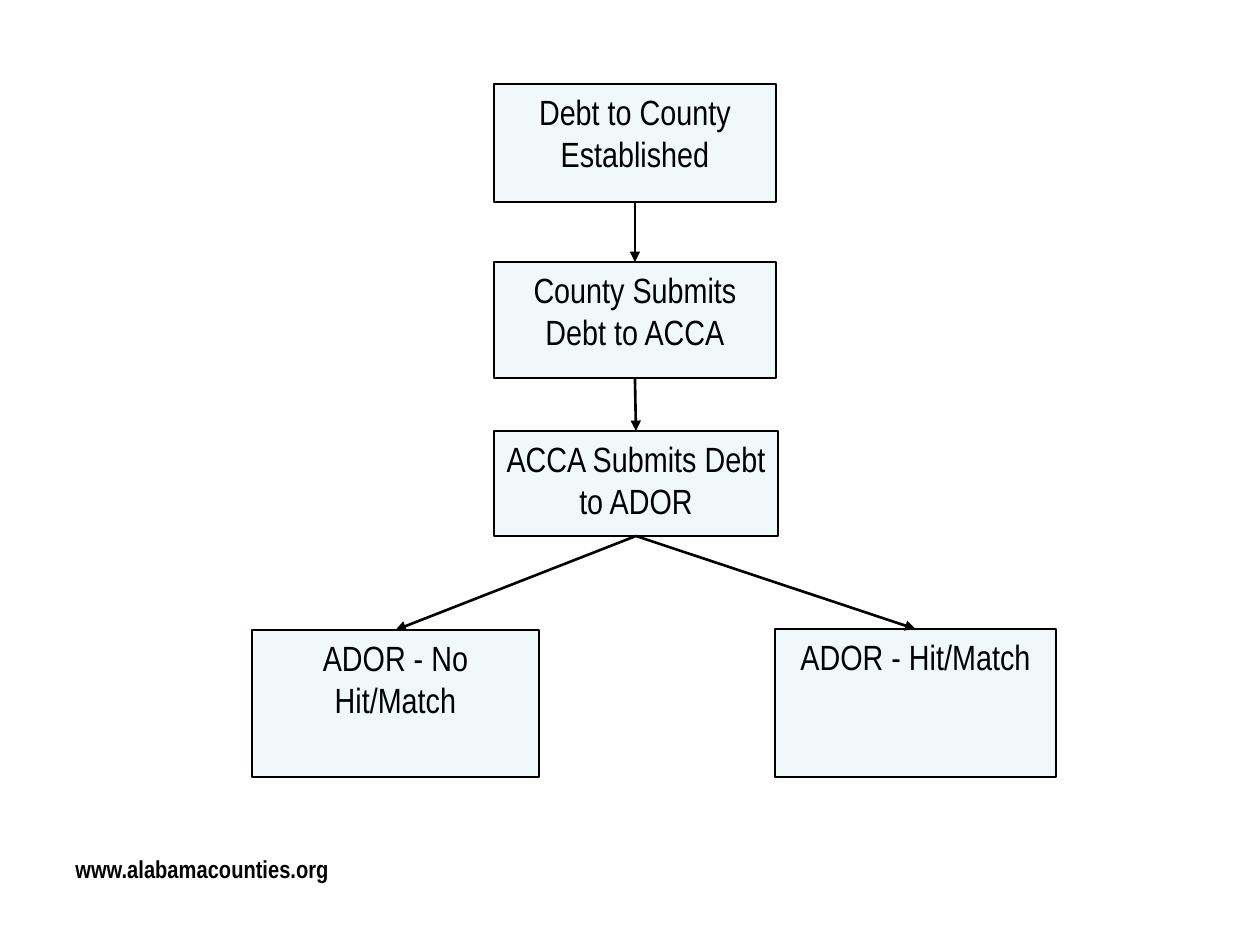
from dataclasses import dataclass
from lxml.etree import SubElement
from pptx import Presentation
from pptx.dml.color import RGBColor
from pptx.enum.shapes import MSO_CONNECTOR, MSO_SHAPE
from pptx.enum.text import MSO_ANCHOR, PP_ALIGN
from pptx.oxml.ns import qn
from pptx.shapes.autoshape import Shape
from pptx.slide import Slide
from pptx.util import Emu, Pt

BLACK = RGBColor(0x00, 0x00, 0x00)
PALE = RGBColor(0xF0, 0xF8, 0xF9)
FONT = "Arial Narrow"
SCALE = 914400 / 126
TOP, BOTTOM = 0, 2


@dataclass
class Step:
    text: str
    left: int
    top: int
    width: int
    height: int


STEPS = [
    Step("Debt to County Established", 494, 84, 282, 118),
    Step("County Submits Debt to ACCA", 494, 262, 282, 116),
    Step("ACCA Submits Debt to ADOR", 494, 431, 284, 105),
    Step("ADOR - No Hit/Match", 252, 630, 287, 147),
    Step("ADOR - Hit/Match", 775, 629, 281, 148),
]
LINKS = [(0, 1), (1, 2), (2, 3), (2, 4)]


def px(count: int) -> Emu:
    return Emu(round(count * SCALE))


def write(shape: Shape, text: str, size: int, bold: bool, align: PP_ALIGN) -> None:
    frame = shape.text_frame
    frame.word_wrap = True
    frame.vertical_anchor = MSO_ANCHOR.TOP
    para = frame.paragraphs[0]
    para.alignment = align
    run = para.add_run()
    run.text = text
    run.font.name = FONT
    run.font.size = Pt(size)
    run.font.bold = bold
    run.font.color.rgb = BLACK


def draw_step(slide: Slide, step: Step) -> Shape:
    box = slide.shapes.add_shape(
        MSO_SHAPE.RECTANGLE,
        px(step.left), px(step.top), px(step.width), px(step.height),
    )
    box.shadow.inherit = False
    box.fill.solid()
    box.fill.fore_color.rgb = PALE
    box.line.color.rgb = BLACK
    box.line.width = Pt(0.75)
    write(box, step.text, 20, False, PP_ALIGN.CENTER)
    return box


def draw_link(slide: Slide, start: Shape, end: Shape) -> None:
    link = slide.shapes.add_connector(MSO_CONNECTOR.STRAIGHT, 0, 0, 0, 0)
    link.begin_connect(start, BOTTOM)
    link.end_connect(end, TOP)
    link.line.color.rgb = BLACK
    link.line.width = Pt(1.5)
    SubElement(link.line._get_or_add_ln(), qn("a:tailEnd"), type="triangle")
    SubElement(link._element.spPr, qn("a:effectLst"))


def main() -> None:
    deck = Presentation()
    deck.slide_width, deck.slide_height = px(1260), px(945)
    slide = deck.slides.add_slide(deck.slide_layouts[6])
    site = slide.shapes.add_textbox(px(63), px(848), px(399), px(66))
    write(site, "www.alabamacounties.org", 14, True, PP_ALIGN.LEFT)
    boxes = [draw_step(slide, step) for step in STEPS]
    for start, end in LINKS:
        draw_link(slide, boxes[start], boxes[end])
    deck.save("out.pptx")


if __name__ == "__main__":
    main()
